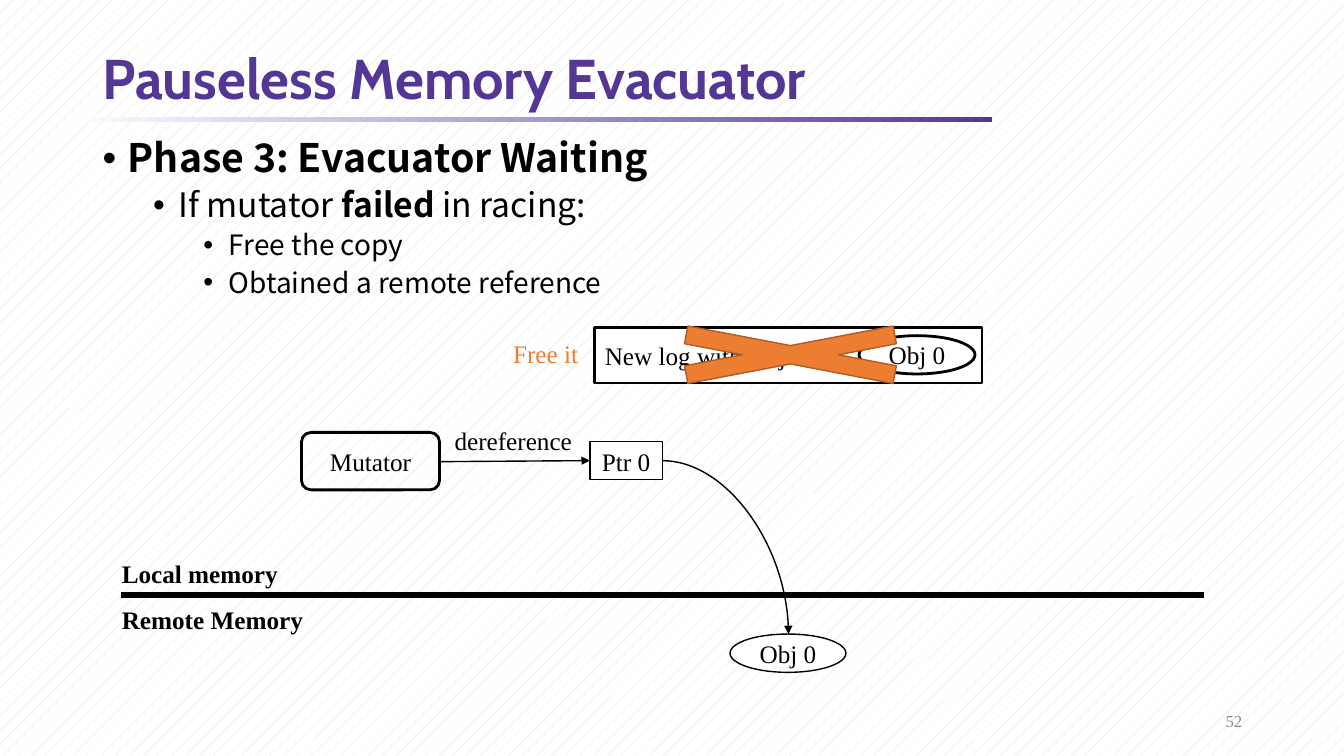
from dataclasses import dataclass

from lxml import etree
from pptx import Presentation
from pptx.dml.color import RGBColor
from pptx.enum.dml import MSO_PATTERN
from pptx.enum.shapes import MSO_CONNECTOR as CONNECTOR, MSO_SHAPE as SHAPE
from pptx.enum.text import MSO_ANCHOR as ANCHOR, MSO_AUTO_SIZE as AUTO_SIZE, PP_ALIGN as ALIGN
from pptx.oxml.ns import qn
from pptx.util import Inches, Pt


@dataclass(frozen=True)
class Theme:
    ink: str = "000000"
    paper: str = "FFFFFF"
    stripe: str = "D9D9D9"
    purple: str = "543795"
    pale: str = "F7FAFD"
    grey: str = "8C8C8C"
    orange: str = "ED7D31"
    rust: str = "AF5C24"
    title_font: str = "Cabin"
    body_font: str = "Noto Sans CJK SC"
    label_font: str = "Times New Roman"
    title_size: int = 40
    body_sizes: tuple = (28, 24, 20)
    label_size: int = 18
    number_size: int = 12


THEME = Theme()


def rgb(value):
    return RGBColor.from_string(value)


def add_run(paragraph, text, font, size, color=THEME.ink, bold=False):
    run = paragraph.add_run()
    run.text = text
    run.font.name, run.font.size, run.font.bold = font, Pt(size), bold
    run.font.color.rgb = rgb(color)


@dataclass
class Box:
    """A region of the slide; parts are placed from its top left corner."""
    shapes: object
    left: float
    top: float
    width: float
    height: float

    def place(self, x, y):
        return Inches(self.left + x), Inches(self.top + y)

    def frame(self, x, y, width, height, anchor=ANCHOR.TOP, wrap=True):
        text_box = self.shapes.add_textbox(*self.place(x, y), Inches(width), Inches(height))
        frame = text_box.text_frame
        frame.word_wrap, frame.vertical_anchor = wrap, anchor
        return frame

    def label(self, text, x, y, width, color=THEME.ink, bold=False):
        frame = self.frame(x, y, width, 0.4, wrap=False)
        frame.auto_size = AUTO_SIZE.SHAPE_TO_FIT_TEXT
        add_run(frame.paragraphs[0], text, THEME.label_font, THEME.label_size, color, bold)

    def node(self, kind, x, y, width, height, text="", fill=None, line=THEME.ink,
             weight=1, align=ALIGN.CENTER, anchor=ANCHOR.MIDDLE):
        node = self.shapes.add_shape(kind, *self.place(x, y), Inches(width), Inches(height))
        node.shadow.inherit = False
        if fill:
            node.fill.solid()
            node.fill.fore_color.rgb = rgb(fill)
        else:
            node.fill.background()
        if line:
            node.line.color.rgb, node.line.width = rgb(line), Pt(weight)
        else:
            node.line.fill.background()
        if text:
            node.text_frame.vertical_anchor = anchor
            paragraph = node.text_frame.paragraphs[0]
            paragraph.alignment = align
            add_run(paragraph, text, THEME.label_font, THEME.label_size)
        return node

    def connect(self, start, end, weight=1, arrow=False, curved=False):
        kind = CONNECTOR.CURVE if curved else CONNECTOR.STRAIGHT
        link = self.shapes.add_connector(kind, *self.place(*start), *self.place(*end))
        link.line.color.rgb, link.line.width = rgb(THEME.ink), Pt(weight)
        properties = link._element.spPr
        if curved:  # a single quarter bend
            properties.find(qn("a:prstGeom")).set("prst", "curvedConnector2")
        if arrow:
            etree.SubElement(properties.find(qn("a:ln")), qn("a:tailEnd"), type="triangle")
        etree.SubElement(properties, qn("a:effectLst"))


def add_header(box, title):
    # Fading rule under the title
    rule = box.node(SHAPE.RECTANGLE, 0, 0.73, 8.92, 0.05, line=None)
    rule.fill.gradient()
    rule.fill.gradient_angle = 0
    for stop, color in zip(rule.fill.gradient_stops, (THEME.pale, THEME.purple)):
        stop.color.rgb = rgb(color)

    heading = box.frame(0, 0, box.width, box.height, ANCHOR.MIDDLE).paragraphs[0]
    heading.line_spacing = 0.9
    add_run(heading, title, THEME.title_font, THEME.title_size, THEME.purple, True)


def add_page_number(box, number):
    paragraph = box.frame(0, 0, box.width, box.height, ANCHOR.MIDDLE).paragraphs[0]
    paragraph.alignment = ALIGN.RIGHT
    add_run(paragraph, number, THEME.label_font, THEME.number_size, THEME.grey)


def add_outline(box, points):
    frame = box.frame(0, 0, box.width, box.height)
    for index, (level, pieces) in enumerate(points):
        point = frame.add_paragraph() if index else frame.paragraphs[0]
        properties = point._p.get_or_add_pPr()
        properties.set("marL", str(Inches(0.25 + 0.5 * level)))
        properties.set("indent", str(Inches(-0.25)))
        etree.SubElement(properties, qn("a:buFont"), typeface="Arial")
        etree.SubElement(properties, qn("a:buChar"), char="•")
        point.level, point.line_spacing = level, 0.9
        point.space_before = Pt(5 if index else 0)
        for text, bold in pieces:
            add_run(point, text, THEME.body_font, THEME.body_sizes[level], bold=bold)


def add_dereference(box):
    # Remote object, mutator and the pointer between them
    middle = 0.4
    box.node(SHAPE.OVAL, 4.25, 2.12, 1.15, 0.38, "Obj 0", THEME.paper)
    box.node(SHAPE.ROUNDED_RECTANGLE, 0, 0.12, 1.37, 0.57, "Mutator", weight=2)
    box.connect((1.37, middle + 0.01), (2.86, middle), arrow=True)
    box.label("dereference", 1.42, 0, 1.38)
    box.node(SHAPE.RECTANGLE, 2.86, 0.21, 0.72, 0.38, "Ptr 0", THEME.paper, anchor=ANCHOR.TOP)
    box.connect((3.58, middle), (4.83, 2.12), arrow=True, curved=True)


def add_freed_log(box):
    # Log with the copied object, crossed out
    log = Box(box.shapes.add_group_shape().shapes, box.left + 0.91, box.top + 0.11, 3.84, 0.55)
    log.node(SHAPE.RECTANGLE, 0, 0, log.width, log.height, "New log with Obj 0",
             THEME.paper, weight=2, align=ALIGN.LEFT)
    log.node(SHAPE.OVAL, 2.62, 0.08, 1.15, 0.38, "Obj 0", weight=2)
    box.node(SHAPE.MATH_MULTIPLY, 0.86, 0, 3.98, box.height, fill=THEME.orange, line=THEME.rust)
    box.label("Free it", 0, 0.17, 0.85, THEME.orange)


def add_memory_border(box):
    box.label("Local memory", 0, 0, 1.77, bold=True)
    box.label("Remote Memory", 0, 0.46, 2.02, bold=True)
    box.connect((0.09, 0.41), (box.width, 0.41), weight=4)


def main():
    deck = Presentation()
    deck.slide_width, deck.slide_height = Inches(13.33), Inches(7.5)
    slide = deck.slides.add_slide(deck.slide_layouts[6])
    backdrop = slide.background.fill
    backdrop.patterned()
    backdrop.pattern = MSO_PATTERN.PERCENT_5
    backdrop.fore_color.rgb, backdrop.back_color.rgb = rgb(THEME.stripe), rgb(THEME.paper)

    shapes = slide.shapes
    add_header(Box(shapes, 0.92, 0.43, 11.5, 0.75), "Pauseless Memory Evacuator")
    add_page_number(Box(shapes, 9.42, 6.95, 3, 0.4), "52")
    add_outline(Box(shapes, 0.92, 1.33, 11.57, 2.18), [
        (0, [("Phase 3: Evacuator Waiting", True)]),
        (1, [("If mutator ", False), ("failed", True), (" in racing:", False)]),
        (2, [("Free the copy", False)]),
        (2, [("Obtained a remote reference", False)]),
    ])
    add_dereference(Box(shapes, 2.99, 4.17, 5.4, 2.5))
    add_freed_log(Box(shapes, 4.99, 3.14, 4.84, 0.76))
    add_memory_border(Box(shapes, 1.11, 5.49, 10.83, 0.86))
    deck.save("out.pptx")


if __name__ == "__main__":
    main()
